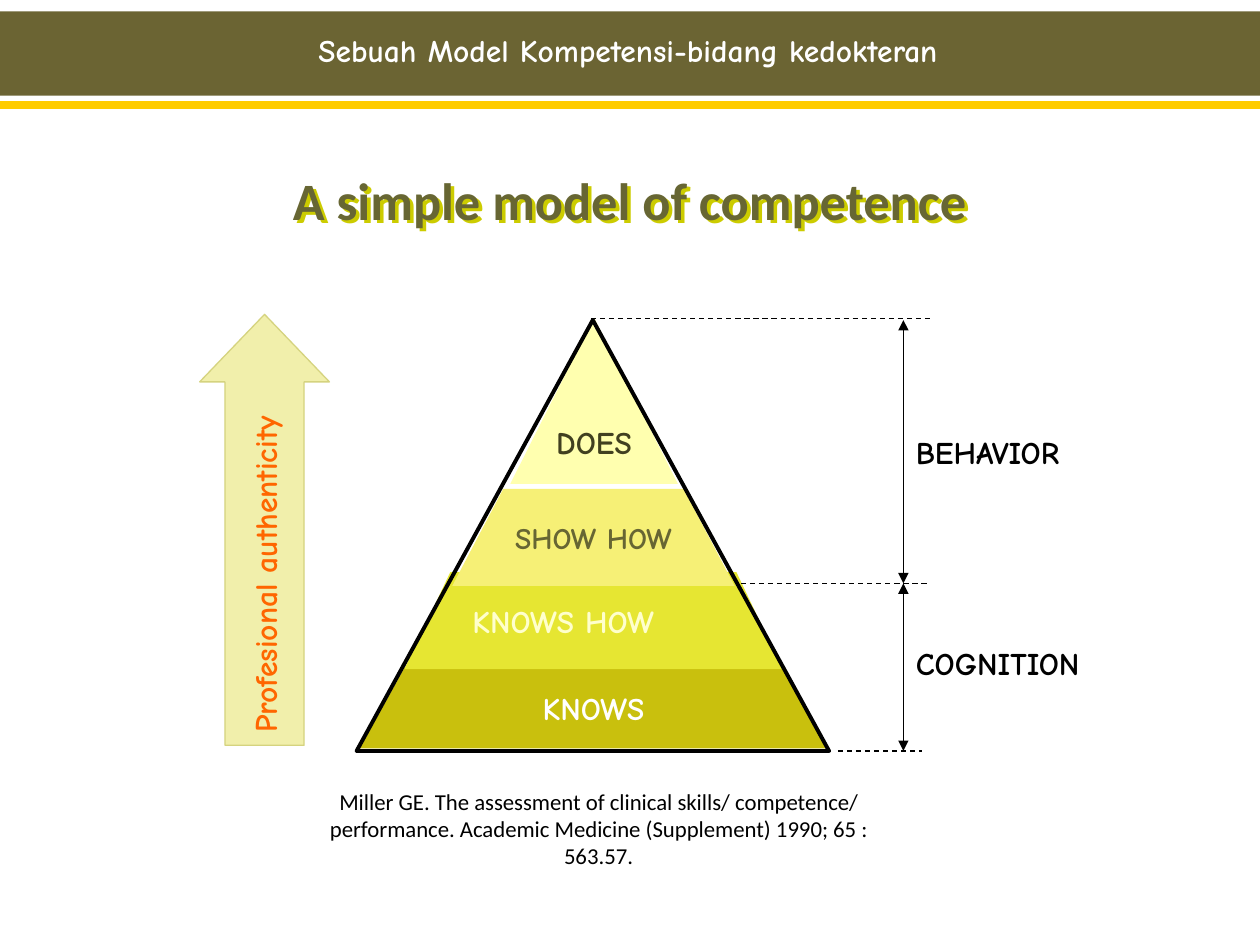
import pptx
import pptx.util
import pptx.dml.color
import pptx.enum.dml
import pptx.enum.shapes
import pptx.enum.text
import pptx.oxml
import pptx.oxml.ns
from lxml import etree

Inches = pptx.util.Inches
Pt = pptx.util.Pt
Align = pptx.enum.text.PP_ALIGN
Anchor = pptx.enum.text.MSO_ANCHOR
Preset = pptx.enum.shapes.MSO_SHAPE
qn = pptx.oxml.ns.qn

COLORS = {
    "olive": "676633", "banner": "6B6433", "gold": "FFCC00", "shadow": "CCCC00",
    "knows": "C9C00D", "knows_how": "E6E632", "show_how": "F6F076", "does": "FFFFAF",
    "arrow": "F1EFAB", "arrow_edge": "D5D37F", "orange": "FF6600", "cream": "FFFFCC",
    "dark": "414020", "black": "000000", "white": "FFFFFF",
}
LABEL_FONT = "Comic Neue"
BODY_FONT = "Calibri"
APEX_X = 4.71


def rgb(name):
    return pptx.dml.color.RGBColor.from_string(COLORS[name])


def write(shape, text, size, color, font=LABEL_FONT, bold=True,
          align=Align.CENTER, anchor=Anchor.MIDDLE, wrap=True):
    frame = shape.text_frame
    frame.word_wrap = wrap
    frame.vertical_anchor = anchor
    paragraph = frame.paragraphs[0]
    paragraph.alignment = align
    run = paragraph.add_run()
    run.text = text
    run.font.name = font
    run.font.size = Pt(size)
    run.font.bold = bold
    run.font.color.rgb = rgb(color)


def style(shape, fill=None, line=None, width=0.75):
    shape.shadow.inherit = False
    if fill:
        shape.fill.solid()
        shape.fill.fore_color.rgb = rgb(fill)
    else:
        shape.fill.background()
    if line:
        shape.line.color.rgb = rgb(line)
        shape.line.width = Pt(width)
    else:
        shape.line.fill.background()


def add_preset(slide, preset, box, **look):
    shape = slide.shapes.add_shape(preset, *map(Inches, box))
    style(shape, **look)
    return shape


def add_label(slide, box, text, size=18, color="black", **options):
    label = slide.shapes.add_textbox(*map(Inches, box))
    write(label, text, size, color, anchor=Anchor.TOP, **options)


def add_level(slide, top, bottom, top_width, bottom_width, fill, center=APEX_X):
    corners = [(center - bottom_width / 2, bottom), (center - top_width / 2, top),
               (center + top_width / 2, top), (center + bottom_width / 2, bottom)]
    points = [(Inches(x), Inches(y)) for x, y in corners]
    builder = slide.shapes.build_freeform(*points[0])
    builder.add_line_segments(points[1:], close=True)
    level = builder.convert_to_shape()
    style(level, fill=fill)
    return level


def add_line(slide, start, end, color="black", width=0.75, dashed=False, arrows=False):
    line = slide.shapes.add_connector(
        pptx.enum.shapes.MSO_CONNECTOR.STRAIGHT, *map(Inches, start + end))
    line.line.color.rgb = rgb(color)
    line.line.width = Pt(width)
    if dashed:
        line.line.dash_style = pptx.enum.dml.MSO_LINE.DASH
    if arrows:
        for tag in ("a:headEnd", "a:tailEnd"):
            etree.SubElement(line.line._get_or_add_ln(), qn(tag), type="triangle")
    etree.SubElement(line._element.spPr, qn("a:effectLst"))


def add_title(slide):
    title = slide.shapes.title
    title.left, title.top, title.width, title.height = map(Inches, (0.75, 1.08, 8.5, 1))
    write(title, "A simple model of competence", 30, "olive", font=BODY_FONT)
    effects = etree.SubElement(title._element.spPr, qn("a:effectLst"))
    shadow = etree.SubElement(effects, qn("a:outerShdw"), dist=str(Inches(0.04)),
                              dir="2700000", algn="ctr", rotWithShape="0")
    etree.SubElement(shadow, qn("a:srgbClr"), val=COLORS["shadow"])


def add_banner(slide):
    add_preset(slide, Preset.RECTANGLE, (0, 0.09, 10, 0.67), fill="banner")
    add_line(slide, (0, 0.83), (10, 0.83), "gold", 4.5)
    add_label(slide, (1.82, 0.2, 6.33, 0.4),
              "Sebuah Model Kompetensi-bidang kedokteran", color="white")


def add_pyramid(slide):
    knows = add_level(slide, 5.29, 5.94, 2.99, 3.71, "knows")
    write(knows, "KNOWS", 18, "white", wrap=False)
    knows_how = add_level(slide, 4.54, 5.31, 2.27, 3, "knows_how")
    write(knows_how, "KNOWS HOW", 18, "cream")
    knows_how.text_frame.margin_left = 0
    knows_how.text_frame.margin_right = Inches(0.48)
    show_how = add_level(slide, 3.88, 4.65, 1.43, 2.24, "show_how")
    write(show_how, "SHOW HOW", 17, "olive", wrap=False)
    does = add_preset(slide, Preset.ISOSCELES_TRIANGLE, (4.05, 2.52, 1.33, 1.32), fill="does")
    write(does, "DOES", 18, "dark", wrap=False)


def add_domains(slide):
    axis, apex, split, base = 7.17, 2.54, 4.63, 5.96
    for end in (base, apex):
        add_line(slide, (axis, split), (axis, end), arrows=True)
    for left, right, y in ((4.69, 7.4, 2.53), (5.88, 7.38, split), (6.65, 7.32, base)):
        add_line(slide, (left, y), (right, y), dashed=True)
    for text, top in (("COGNITION", 5.06), ("BEHAVIOR", 3.39)):
        add_label(slide, (axis, top, 2, 0.4), text, align=Align.LEFT)
    add_preset(slide, Preset.ISOSCELES_TRIANGLE, (2.83, apex, 3.75, base - apex),
               line="black", width=2.25)


def add_authenticity_arrow(slide):
    arrow = add_preset(slide, Preset.RIGHT_ARROW, (0.39, 3.69, 3.42, 1.03),
                       fill="arrow", line="arrow_edge")
    arrow.rotation = 270
    arrow.adjustments[0] = 0.61
    arrow.adjustments[1] = 0.52
    write(arrow, "Profesional authenticity", 18, "orange", align=Align.LEFT)


def main():
    deck = pptx.Presentation()
    deck.slide_width, deck.slide_height = Inches(10), Inches(7.5)
    slide = deck.slides.add_slide(deck.slide_layouts[5])
    add_title(slide)
    add_pyramid(slide)
    add_domains(slide)
    add_authenticity_arrow(slide)
    add_label(slide, (2.5, 6.2, 4.5, 0.75),
              "Miller GE. The assessment of clinical skills/ competence/ performance. "
              "Academic Medicine (Supplement) 1990; 65 : 563.57.",
              size=13, font=BODY_FONT, bold=False)
    add_banner(slide)
    deck.save("out.pptx")


if __name__ == "__main__":
    main()
